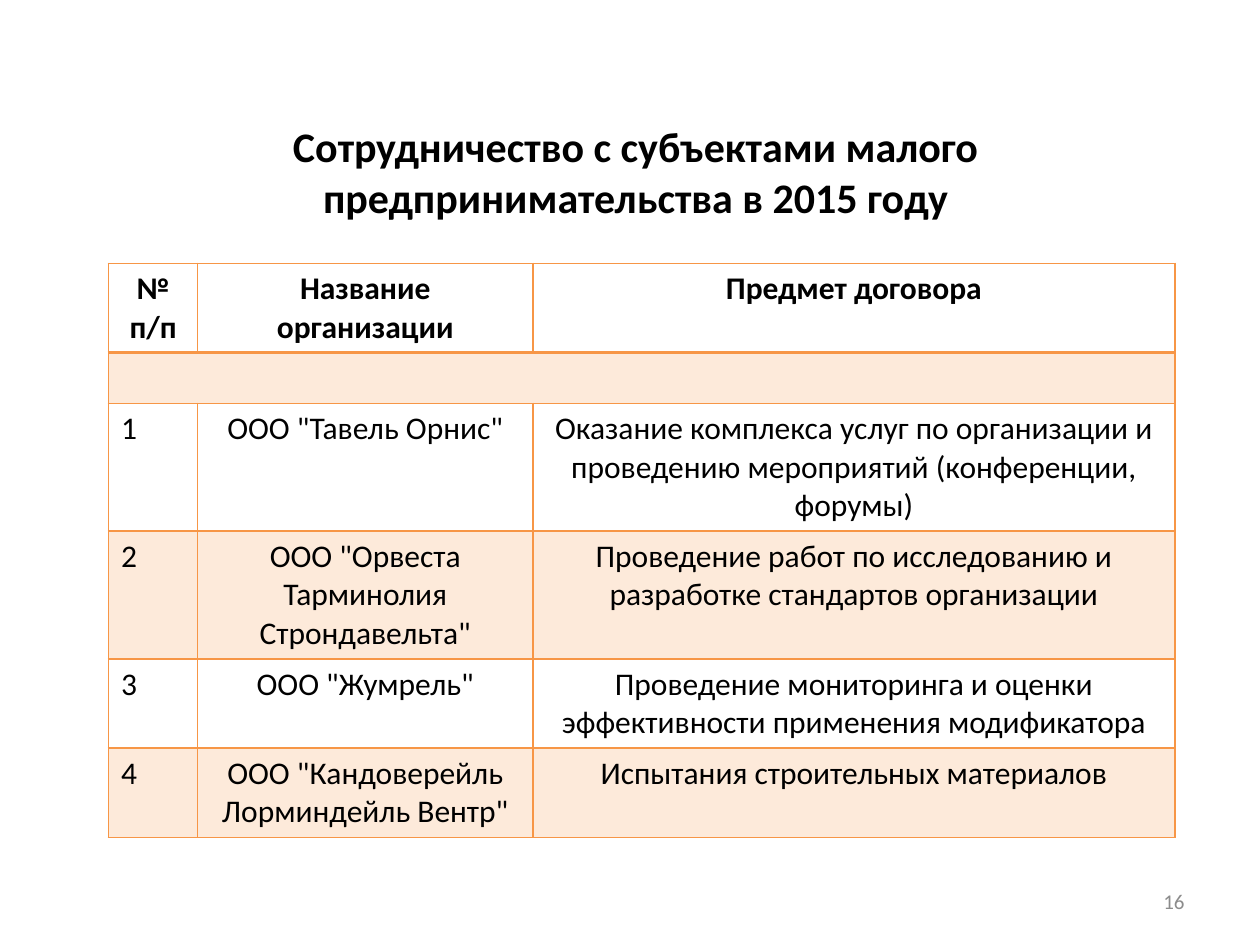
"""Slide with a table of contracts with small businesses in 2015."""
from dataclasses import dataclass

from lxml.etree import SubElement
from pptx import Presentation
from pptx.dml.color import RGBColor
from pptx.enum.text import MSO_ANCHOR, MSO_AUTO_SIZE, PP_ALIGN
from pptx.oxml.ns import qn
from pptx.util import Pt


@dataclass(frozen=True)
class Theme:
    font: str = "Calibri"
    ink: str = "000000"
    accent: str = "F79646"
    muted: str = "8C8C8C"
    title: int = 24
    body: int = 18
    footer: int = 12
    band_opacity: int = 20


theme = Theme()


def write(frame, text, align, size, color=theme.ink, bold=False):
    paragraph = frame.paragraphs[0]
    paragraph.alignment = align
    run = paragraph.add_run()
    run.text = text
    font_format = {"name": theme.font, "size": Pt(size), "bold": bold}
    for name, value in font_format.items():
        setattr(run.font, name, value)
    run.font.color.rgb = RGBColor.from_string(color)


def outline(cell, widths):
    properties = cell._tc.get_or_add_tcPr()
    for index, (side, width) in enumerate(widths.items()):
        border = SubElement(properties, qn(f"a:{side}"), w=str(Pt(width)))
        fill = SubElement(border, qn("a:solidFill"))
        SubElement(fill, qn("a:srgbClr"), val=theme.accent)
        properties.insert(index, border)


header = ("№ п/п", "Название организации", "Предмет договора")
contracts = [
    ('ООО "Тавель Орнис"',
     "Оказание комплекса услуг по организации и проведению мероприятий (конференции, форумы)"),
    ('ООО "Орвеста Тарминолия Строндавельта"',
     "Проведение работ по исследованию и разработке стандартов организации"),
    ('ООО "Жумрель"',
     "Проведение мониторинга и оценки эффективности применения модификатора"),
    ('ООО "Кандоверейль Лорминдейль Вентр"', "Испытания строительных материалов"),
]
rows = [header, ("", "", "")]
rows += [(str(number), *contract) for number, contract in enumerate(contracts, 1)]
column_widths = (51, 191.5, 367)
row_heights = (51, 29, 73, 73, 51, 51)

presentation = Presentation()
presentation.slide_width, presentation.slide_height = Pt(720), Pt(540)
slide = presentation.slides.add_slide(presentation.slide_layouts[5])

title = slide.shapes.title
title_place = {"left": Pt(42.5), "top": Pt(65.5), "width": Pt(641.5), "height": Pt(65.5)}
for name, value in title_place.items():
    setattr(title, name, value)
title_format = {"word_wrap": True, "vertical_anchor": MSO_ANCHOR.TOP,
                "auto_size": MSO_AUTO_SIZE.SHAPE_TO_FIT_TEXT}
for name, value in title_format.items():
    setattr(title.text_frame, name, value)
write(title.text_frame, "Сотрудничество с субъектами малого предпринимательства в 2015 году",
      PP_ALIGN.CENTER, theme.title, bold=True)

contract_table = slide.shapes.add_table(
    len(rows), len(header), Pt(62), Pt(150.5), Pt(sum(column_widths)), Pt(sum(row_heights))).table
contract_table.horz_banding = False
contract_table.first_row = False
for column, width in zip(contract_table.columns, column_widths):
    column.width = Pt(width)
for row, height in zip(contract_table.rows, row_heights):
    row.height = Pt(height)

for row_index, row in enumerate(rows):
    for column_index, text in enumerate(row):
        cell = contract_table.cell(row_index, column_index)
        if row_index % 2:
            cell.fill.solid()
            cell.fill.fore_color.rgb = RGBColor.from_string(theme.accent)
            color = cell._tc.tcPr.find(f".//{qn('a:srgbClr')}")
            SubElement(color, qn("a:alpha"), val=str(theme.band_opacity * 1000))
        else:
            cell.fill.background()
        outline(cell, {"lnL": 1, "lnR": 1,
                       "lnT": 2 if row_index == 1 else 1,
                       "lnB": 2 if row_index == 0 else 1})
        if text:
            numbered = row_index > 0 and column_index == 0
            write(cell.text_frame, text, PP_ALIGN.LEFT if numbered else PP_ALIGN.CENTER,
                  theme.body, bold=row_index == 0)
contract_table.cell(1, 0).merge(contract_table.cell(1, len(header) - 1))

page_number = slide.shapes.add_textbox(Pt(516), Pt(500.5), Pt(168), Pt(28.75)).text_frame
page_number.word_wrap = True
page_number.vertical_anchor = MSO_ANCHOR.MIDDLE
write(page_number, "16", PP_ALIGN.RIGHT, theme.footer, theme.muted)

presentation.save("out.pptx")
